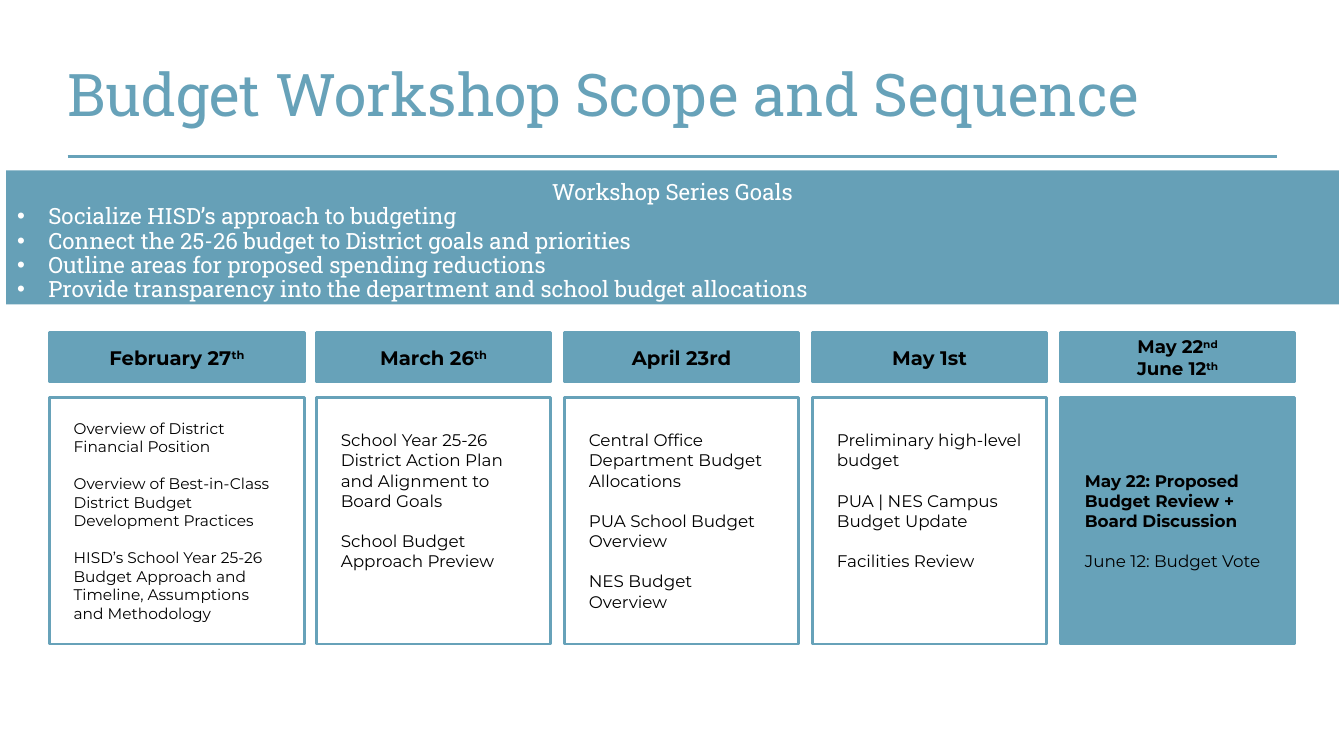
"""Build the budget workshop scope and sequence slide."""
from dataclasses import dataclass

from lxml import etree
from pptx import Presentation
from pptx import util as u
from pptx.dml.color import RGBColor
from pptx.enum import shapes, text
from pptx.oxml import ns

TEAL = RGBColor(0x67, 0xA2, 0xB9)
BANNER_TEAL = RGBColor(0x66, 0xA0, 0xB7)
WHITE = RGBColor(0xFF, 0xFF, 0xFF)
BLACK = RGBColor(0x00, 0x00, 0x00)
SLAB = "Roboto Slab"
SANS = "Montserrat"

FIRST_LEFT, FIRST_WIDTH = 0.49, 2.53
SECOND_LEFT, WIDTH, PITCH = 3.14, 2.32, 2.46
DATE_TOP, DATE_HEIGHT = 3.3, 0.49
TOPIC_TOP, TOPIC_HEIGHT = 3.94, 2.45
SIDE_INSET, END_INSET = 0.24, 0.16

GOALS = [
    "Socialize HISD’s approach to budgeting",
    "Connect the 25-26 budget to District goals and priorities",
    "Outline areas for proposed spending reductions",
    "Provide transparency into the department and school budget allocations",
]


@dataclass
class Workshop:
    """One column: (date, ordinal) pairs above a box of topics."""
    dates: list[tuple[str, str]]
    topics: list[str]
    date_size: int = 14
    topic_size: int = 12
    bottom_inset: float = END_INSET
    final: bool = False


WORKSHOPS = [
    Workshop([("February 27", "th")], [
        "Overview of District Financial Position",
        "Overview of Best-in-Class District Budget Development Practices",
        "HISD’s School Year 25-26 Budget Approach and Timeline, Assumptions and Methodology",
    ], topic_size=11),
    Workshop([("March 26", "th")], [
        "School Year 25-26 District Action Plan and Alignment to Board Goals",
        "School Budget Approach Preview",
    ], bottom_inset=0.56),
    Workshop([("April 23rd", "")], [
        "Central Office Department Budget Allocations",
        "PUA School Budget Overview",
        "NES Budget Overview",
    ]),
    Workshop([("May 1st", "")], [
        "Preliminary high-level budget",
        "PUA | NES Campus Budget Update",
        "Facilities Review",
    ], bottom_inset=0.56),
    Workshop([("May 22", "nd"), ("June 12", "th")], [
        "May 22: Proposed Budget Review + Board Discussion",
        "June 12: Budget Vote",
    ], date_size=13, final=True),
]


def place(box, left: float, top: float, width: float, height: float) -> None:
    """Move and size a shape, in inches."""
    box.left, box.top = u.Inches(left), u.Inches(top)
    box.width, box.height = u.Inches(width), u.Inches(height)


def set_frame(frame, sides: float, top: float, bottom: float, anchor) -> None:
    """Set wrapping, insets and anchor of a text frame."""
    frame.word_wrap = True
    frame.auto_size = text.MSO_AUTO_SIZE.NONE
    frame.vertical_anchor = anchor
    frame.margin_left = frame.margin_right = u.Inches(sides)
    frame.margin_top, frame.margin_bottom = u.Inches(top), u.Inches(bottom)


def style(span, face: str, size: int, color: RGBColor, bold: bool = False) -> None:
    """Format one run."""
    span.font.name, span.font.size, span.font.bold = face, u.Pt(size), bold
    span.font.color.rgb = color


def set_bullet(para, bullet: str = "") -> None:
    """Give a paragraph a hanging bullet, or none."""
    properties = para._p.get_or_add_pPr()
    indent = u.Inches(0.31) if bullet else 0
    properties.set("marL", str(indent))
    properties.set("indent", str(-indent))
    if bullet:
        font = etree.SubElement(properties, ns.qn("a:buFont"))
        font.set("typeface", "Arial")
        etree.SubElement(properties, ns.qn("a:buChar")).set("char", bullet)
    else:
        etree.SubElement(properties, ns.qn("a:buNone"))


def add_box(page, left: float, top: float, width: float, height: float,
            filled: bool, bottom_inset: float = END_INSET):
    """Add a teal-edged rectangle and return its text frame."""
    box = page.shapes.add_shape(shapes.MSO_SHAPE.RECTANGLE, 0, 0, 0, 0)
    place(box, left, top, width, height)
    box.shadow.inherit = False
    box.fill.solid()
    box.fill.fore_color.rgb = TEAL if filled else WHITE
    box.line.color.rgb, box.line.width = TEAL, u.Pt(2)
    set_frame(box.text_frame, SIDE_INSET, END_INSET, bottom_inset, text.MSO_ANCHOR.MIDDLE)
    return box.text_frame


def add_title(page) -> None:
    """Fill the title and draw the rule beneath it."""
    title = page.shapes.title
    place(title, 0.67, 0.3, 12, 1.25)
    set_frame(title.text_frame, 0, 0, 0, text.MSO_ANCHOR.MIDDLE)
    title.text_frame.text = "Budget Workshop Scope and Sequence"
    para = title.text_frame.paragraphs[0]
    para.alignment = text.PP_ALIGN.LEFT
    style(para.runs[0], SLAB, 42, TEAL)
    rule = page.shapes.add_connector(shapes.MSO_CONNECTOR.STRAIGHT, u.Inches(0.67),
                                     u.Inches(1.55), u.Inches(12.67), u.Inches(1.55))
    rule.line.color.rgb, rule.line.width = TEAL, u.Pt(2)
    etree.SubElement(rule._element.spPr, ns.qn("a:effectLst"))


def add_goals(page) -> None:
    """Fill the banner with the goals of the series."""
    banner = page.placeholders[1]
    place(banner, 0.06, 1.69, 13.22, 1.33)
    banner.fill.solid()
    banner.fill.fore_color.rgb = BANNER_TEAL
    set_frame(banner.text_frame, 0.11, 0.11, 0.11, text.MSO_ANCHOR.TOP)
    banner.text_frame.text = "\n".join(["Workshop Series Goals", *GOALS])
    for index, para in enumerate(banner.text_frame.paragraphs):
        set_bullet(para, "•" if index else "")
        para.alignment = text.PP_ALIGN.LEFT if index else text.PP_ALIGN.CENTER
        para.line_spacing, para.space_before = 0.9, u.Pt(0)
        style(para.runs[0], SLAB, 16, WHITE)


def add_workshop(page, workshop: Workshop, left: float, width: float) -> None:
    """Draw the date box and the topic box of one workshop."""
    frame = add_box(page, left, DATE_TOP, width, DATE_HEIGHT, True)
    frame.text = "\n".join(date for date, _ in workshop.dates)
    for para, (_, ordinal) in zip(frame.paragraphs, workshop.dates):
        para.alignment = text.PP_ALIGN.CENTER
        if ordinal:
            span = para.add_run()
            span.text = ordinal
            span._r.get_or_add_rPr().set("baseline", "30000")
        for span in para.runs:
            style(span, SANS, workshop.date_size, BLACK, True)

    frame = add_box(page, left, TOPIC_TOP, width, TOPIC_HEIGHT,
                    workshop.final, workshop.bottom_inset)
    frame.text = "\n".join(workshop.topics)
    for index, para in enumerate(frame.paragraphs):
        para.alignment = text.PP_ALIGN.LEFT
        if index:
            para.space_before = u.Pt(1.2 * workshop.topic_size)
        style(para.runs[0], SANS, workshop.topic_size, BLACK,
              workshop.final and index == 0)


def main() -> None:
    """Build and save the deck."""
    deck = Presentation()
    deck.slide_width, deck.slide_height = u.Inches(13.33), u.Inches(7.5)
    page = deck.slides.add_slide(deck.slide_layouts[1])
    add_title(page)
    add_goals(page)
    add_workshop(page, WORKSHOPS[0], FIRST_LEFT, FIRST_WIDTH)
    for column, workshop in enumerate(WORKSHOPS[1:]):
        add_workshop(page, workshop, SECOND_LEFT + column * PITCH, WIDTH)
    deck.save("out.pptx")


if __name__ == "__main__":
    main()
